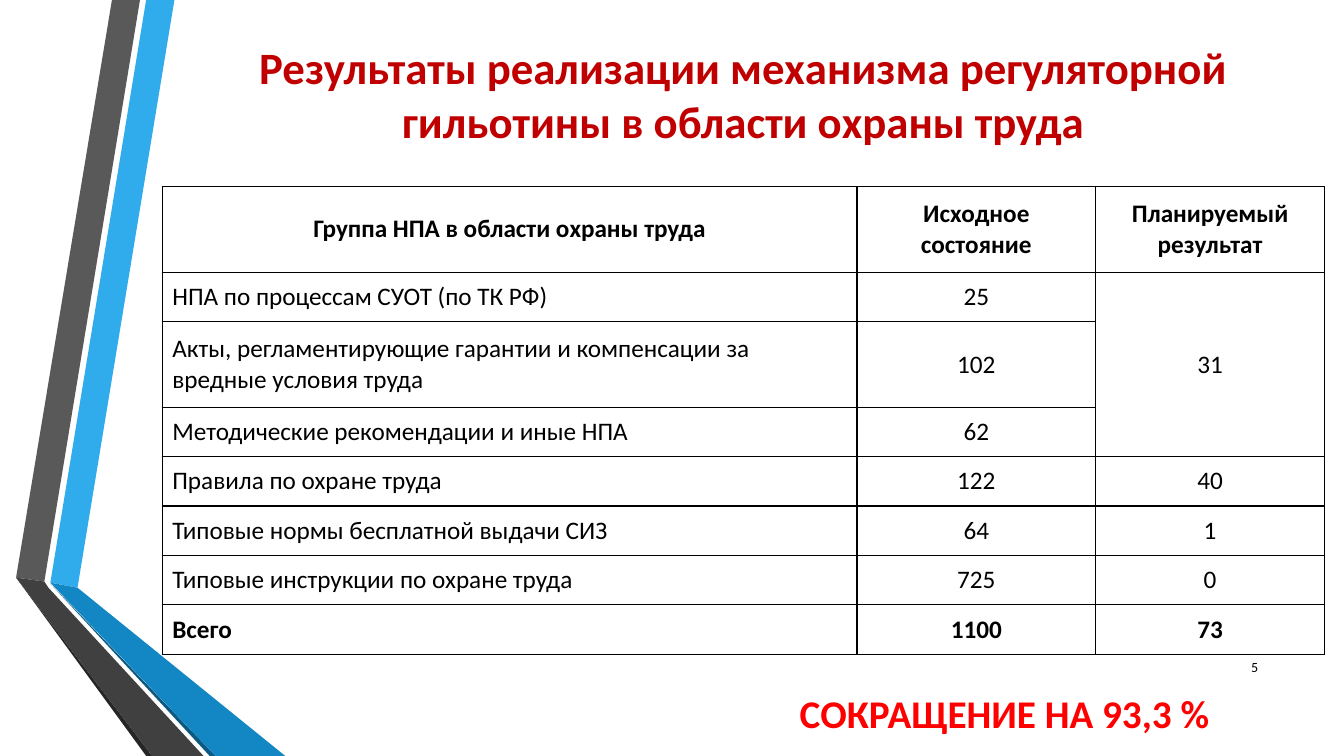
from lxml.etree import SubElement
from pptx import Presentation
from pptx.dml.color import RGBColor
from pptx.enum.text import MSO_ANCHOR as Anchor, MSO_AUTO_SIZE as AutoSize, PP_ALIGN as Align
from pptx.oxml import parse_xml
from pptx.oxml.ns import nsdecls, qn
from pptx.util import Pt

FONT = "Calibri"
BLACK = RGBColor(0x00, 0x00, 0x00)
TITLE_RED = RGBColor(0xC0, 0x00, 0x00)
CALLOUT_RED = RGBColor(0xFF, 0x00, 0x00)
SKY = RGBColor(0x30, 0xAC, 0xEC)
SKY_MID = RGBColor(0x12, 0x87, 0xC3)
SKY_DARK = RGBColor(0x0C, 0x5A, 0x82)
GRAY = RGBColor(0x59, 0x59, 0x59)
GRAY_MID = RGBColor(0x40, 0x40, 0x40)
GRAY_DARK = RGBColor(0x26, 0x26, 0x26)

RIBBONS = [
    (SKY, [(36, 416.2), (55.4, 419.8), (124.6, 0), (104.4, 0)]),
    (GRAY, [(100, 0), (80, 0), (11.5, 412.6), (31.7, 415.4)]),
    (GRAY_DARK, [(11.5, 412.6), (104.4, 540), (108.7, 540)]),
    (SKY_DARK, [(36, 416.9), (149.8, 540), (154, 540)]),
    (SKY_MID, [(36, 416.2), (154, 540), (203.8, 540), (55.4, 419.8)]),
    (GRAY_MID, [(145.4, 540), (34.6, 419.8), (31.7, 415.4), (11.5, 412.6), (108.7, 540)]),
]
TITLE = "Результаты реализации механизма регуляторной гильотины в области охраны труда"
ROWS = [
    ("Группа НПА в области охраны труда", "Исходное состояние", "Планируемый результат"),
    ("НПА по процессам СУОТ (по ТК РФ)", "25", "31"),
    ("Акты, регламентирующие гарантии и компенсации за вредные условия труда", "102", ""),
    ("Методические рекомендации и иные НПА", "62", ""),
    ("Правила по охране труда", "122", "40"),
    ("Типовые нормы бесплатной выдачи СИЗ", "64", "1"),
    ("Типовые инструкции по охране труда", "725", "0"),
    ("Всего", "1100", "73"),
]
COLUMN_WIDTHS = (496.2, 170.6, 163.4)
ROW_HEIGHT, TALL_ROW_HEIGHT = 35.3, 61.2
TALL_ROWS = (0, 2)


def write(frame, text, align, color, **font):
    """Put one formatted paragraph into a text frame."""
    para = frame.paragraphs[0]
    para.alignment = align
    span = para.add_run()
    span.text = text
    span.font.color.rgb = color
    for name, value in {"name": FONT, **font}.items():
        setattr(span.font, name, value)


def set_frame(frame):
    """Make a text frame wrap, keep its size and centre its text vertically."""
    settings = {"word_wrap": True, "auto_size": AutoSize.NONE, "vertical_anchor": Anchor.MIDDLE}
    for name, value in settings.items():
        setattr(frame, name, value)


def add_ribbon(page, color, points):
    """Draw one filled outline without a line."""
    corners = [(Pt(x), Pt(y)) for x, y in points]
    builder = page.shapes.build_freeform(*corners[0])
    builder.add_line_segments(corners[1:], close=True)
    ribbon = builder.convert_to_shape()
    ribbon.shadow.inherit = False
    ribbon.fill.solid()
    ribbon.fill.fore_color.rgb = color
    ribbon.line.fill.background()


def set_title(page):
    """Place and fill the title placeholder."""
    title = page.shapes.title
    place = {"left": 115.9, "top": 29.5, "width": 830.2, "height": 74.9}
    for name, value in place.items():
        setattr(title, name, Pt(value))
    set_frame(title.text_frame)
    write(title.text_frame, TITLE, Align.CENTER, TITLE_RED, size=Pt(32), bold=True)


def add_text(page, place, text, align, color, **font):
    """Add a text box at a place given in points."""
    box = page.shapes.add_textbox(*map(Pt, place))
    set_frame(box.text_frame)
    write(box.text_frame, text, align, color, **font)


def set_borders(cell):
    """Give a cell thin black borders on all sides."""
    properties = cell._tc.get_or_add_tcPr()
    for index, side in enumerate(("lnL", "lnR", "lnT", "lnB")):
        border = parse_xml(f'<a:{side} {nsdecls("a")} w="{Pt(1)}"/>')
        fill = SubElement(border, qn("a:solidFill"))
        SubElement(fill, qn("a:srgbClr"), val=str(BLACK))
        properties.insert(index, border)


def add_results_table(page):
    """Add the table of document groups with counts before and after."""
    heights = [TALL_ROW_HEIGHT if i in TALL_ROWS else ROW_HEIGHT for i in range(len(ROWS))]
    place = (115.9, 133.2, sum(COLUMN_WIDTHS), sum(heights))
    table = page.shapes.add_table(len(ROWS), len(COLUMN_WIDTHS), *map(Pt, place)).table
    table.first_row = table.horz_banding = False
    for column, width in zip(table.columns, COLUMN_WIDTHS):
        column.width = Pt(width)
    for row, height in zip(table.rows, heights):
        row.height = Pt(height)
    table.cell(1, 2).merge(table.cell(3, 2))
    for i, texts in enumerate(ROWS):
        for j, text in enumerate(texts):
            cell = table.cell(i, j)
            cell.vertical_anchor = Anchor.MIDDLE
            cell.fill.background()
            set_borders(cell)
            if text:
                align = Align.LEFT if i and not j else Align.CENTER
                bold = i in (0, len(ROWS) - 1)
                write(cell.text_frame, text, align, BLACK, size=Pt(18), bold=bold)


def main():
    """Build and save the slide."""
    deck = Presentation()
    deck.slide_width, deck.slide_height = Pt(960), Pt(540)
    page = deck.slides.add_slide(deck.slide_layouts.get_by_name("Title Only"))
    for color, points in RIBBONS:
        add_ribbon(page, color, points)
    set_title(page)
    add_text(page, (537.8, 490, 359.3, 38), "СОКРАЩЕНИЕ НА 93,3 %",
             Align.CENTER, CALLOUT_RED, size=Pt(28), bold=True)
    add_results_table(page)
    add_text(page, (862.6, 462.2, 43.2, 28.8), "5", Align.RIGHT, BLACK, size=Pt(10))
    deck.save("out.pptx")


if __name__ == "__main__":
    main()
